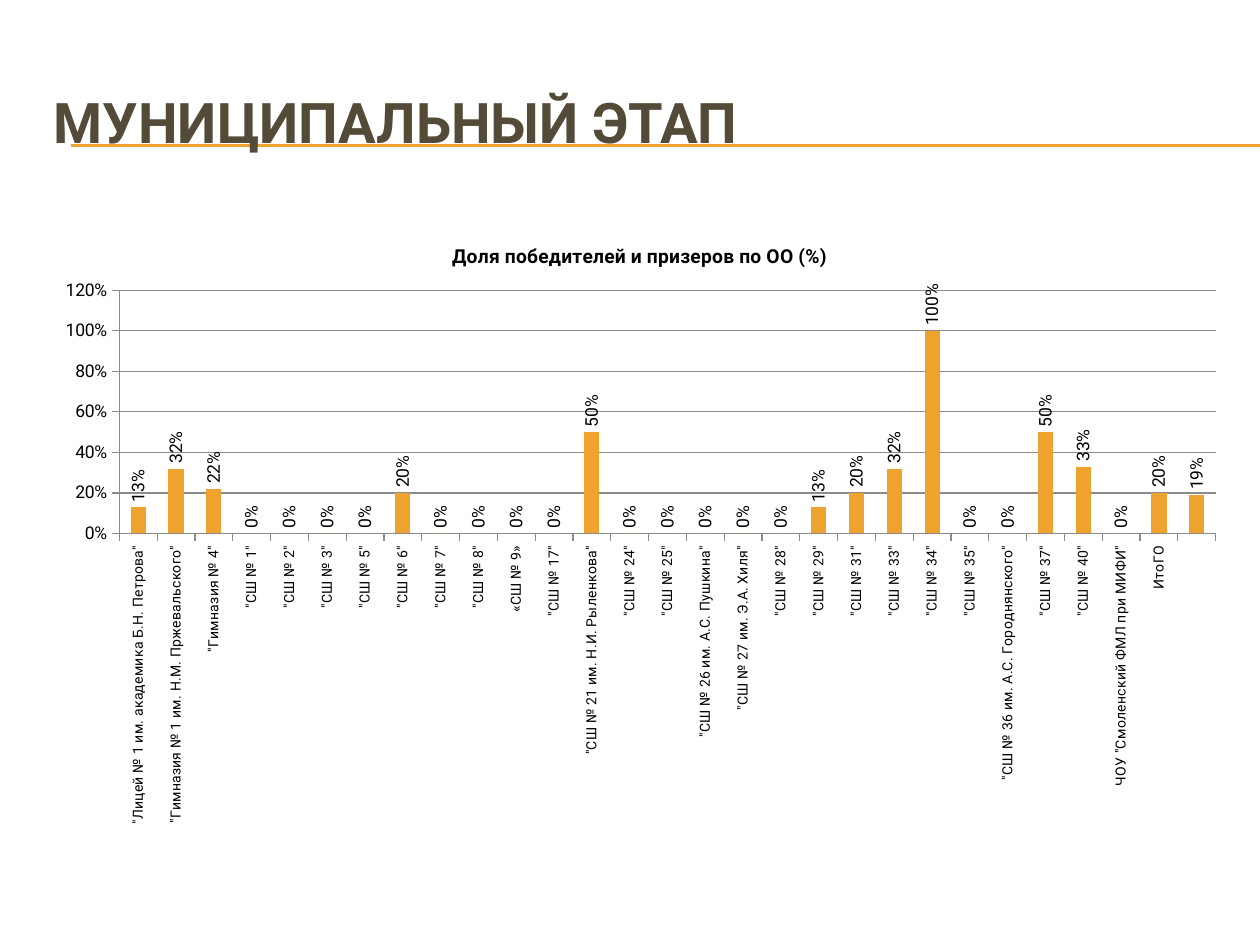
from dataclasses import dataclass

from lxml import etree
from pptx import Presentation
from pptx.chart.data import CategoryChartData
from pptx.dml.color import RGBColor
from pptx.enum import chart as ch, shapes, text
from pptx.oxml.ns import qn
from pptx.util import Inches, Pt

FONT = "Roboto"
ORANGE = RGBColor(0xF0, 0xA2, 0x2E)
BROWN = RGBColor(0x53, 0x4B, 0x38)
BLACK = RGBColor(0, 0, 0)
GRAY = RGBColor(0x8B, 0x8B, 0x8B)
VERTICAL = "-5400000"


@dataclass
class School:
    name: str
    share: float = 0


SCHOOLS = [
    School('"Лицей № 1 им. академика Б.Н. Петрова"', 0.13),
    School('"Гимназия № 1 им. Н.М. Пржевальского"', 0.32),
    School('"Гимназия № 4"', 0.22),
    School('"СШ № 1"'),
    School('"СШ № 2"'),
    School('"СШ № 3"'),
    School('"СШ № 5"'),
    School('"СШ № 6"', 0.2),
    School('"СШ № 7"'),
    School('"СШ № 8"'),
    School("«СШ № 9»"),
    School('"СШ № 17"'),
    School('"СШ № 21 им. Н.И. Рыленкова"', 0.5),
    School('"СШ № 24"'),
    School('"СШ № 25"'),
    School('"СШ № 26 им. А.С. Пушкина"'),
    School('"СШ № 27 им. Э.А. Хиля"'),
    School('"СШ № 28"'),
    School('"СШ № 29"', 0.13),
    School('"СШ № 31"', 0.2),
    School('"СШ № 33"', 0.32),
    School('"СШ № 34"', 1),
    School('"СШ № 35"'),
    School('"СШ № 36 им. А.С. Городнянского"'),
    School('"СШ № 37"', 0.5),
    School('"СШ № 40"', 0.33),
    School('ЧОУ "Смоленский ФМЛ при МИФИ"'),
    School("ИтоГО", 0.2),
    School("", 0.19),
]


def set_font(font, size: float, color: RGBColor = BLACK, bold: bool = False) -> None:
    font.name, font.size, font.bold = FONT, Pt(size), bold
    font.color.rgb = color


def add_rule(s, y: float) -> None:
    line = s.shapes.add_connector(
        shapes.MSO_CONNECTOR.STRAIGHT, Inches(0.56), Inches(y), Inches(10), Inches(y))
    line.line.color.rgb = ORANGE
    line.line.width = Pt(0.75)
    etree.SubElement(line._element.spPr, qn("a:effectLst"))


def add_heading(s, wording: str) -> None:
    sp = s.shapes.add_textbox(Inches(0.33), Inches(0.5), Inches(9.5), Inches(0.92))
    tf = sp.text_frame
    tf.word_wrap = True
    tf.vertical_anchor = text.MSO_ANCHOR.MIDDLE
    tf.text = wording
    set_font(tf.paragraphs[0].runs[0].font, 32, BROWN, True)


def set_layout(element, index: int, **values) -> None:
    for old in element.findall(qn("c:layout")):
        element.remove(old)
    layout = etree.Element(qn("c:layout"))
    manual = etree.SubElement(layout, qn("c:manualLayout"))
    for tag, value in values.items():
        etree.SubElement(manual, qn("c:" + tag)).set("val", str(value))
    element.insert(index, layout)


def turn_text(element) -> None:
    body = element.find(qn("c:txPr")).find(qn("a:bodyPr"))
    body.set("rot", VERTICAL)
    body.set("vert", "horz")


def add_share_chart(s, title: str, schools: list[School]) -> None:
    data = CategoryChartData(number_format="0%")
    data.categories = [school.name for school in schools]
    data.add_series("Series 1", [school.share for school in schools])
    chart = s.shapes.add_chart(
        ch.XL_CHART_TYPE.COLUMN_CLUSTERED,
        Inches(0.33), Inches(1.7), Inches(9.5), Inches(4.95), data).chart
    set_font(chart.font, 10)
    chart.has_legend = False

    tf = chart.chart_title.text_frame
    tf.text = title
    set_font(tf.paragraphs[0].runs[0].font, 11, bold=True)
    set_layout(chart.chart_title._element, 1,
               xMode="edge", yMode="edge", x=0.34, y=0.04)
    plot_area = chart._chartSpace.find(qn("c:chart")).find(qn("c:plotArea"))
    set_layout(plot_area, 0, layoutTarget="inner",
               xMode="edge", yMode="edge", x=0.065, y=0.122, w=0.916, h=0.39)

    for axis, size in ((chart.category_axis, 8), (chart.value_axis, 10)):
        axis.major_tick_mark = ch.XL_TICK_MARK.OUTSIDE
        axis.format.line.color.rgb = GRAY
        set_font(axis.tick_labels.font, size)
    turn_text(chart.category_axis._element)
    value_axis = chart.value_axis
    value_axis.minimum_scale, value_axis.maximum_scale = 0, 1.2
    value_axis.major_unit = 0.2
    value_axis.tick_labels.number_format = "0%"
    value_axis.tick_labels.number_format_is_linked = False
    value_axis.major_gridlines.format.line.color.rgb = GRAY

    plot = chart.plots[0]
    plot.gap_width = 150
    plot.vary_by_categories = False
    series = plot.series[0]
    series.format.fill.solid()
    series.format.fill.fore_color.rgb = ORANGE
    labels = series.data_labels
    labels.show_value = True
    labels.number_format = "0%"
    labels.number_format_is_linked = False
    labels.position = ch.XL_LABEL_POSITION.OUTSIDE_END
    set_font(labels.font, 10)
    turn_text(labels._element)


def main() -> None:
    prs = Presentation()
    prs.slide_width, prs.slide_height = Inches(10), Inches(7.5)
    s = prs.slides.add_slide(prs.slide_layouts[6])
    for y in (1.15, 1.16):
        add_rule(s, y)
    add_heading(s, "МУНИЦИПАЛЬНЫЙ ЭТАП")
    add_share_chart(s, "Доля победителей и призеров по ОО (%)", SCHOOLS)
    prs.save("out.pptx")


if __name__ == "__main__":
    main()
